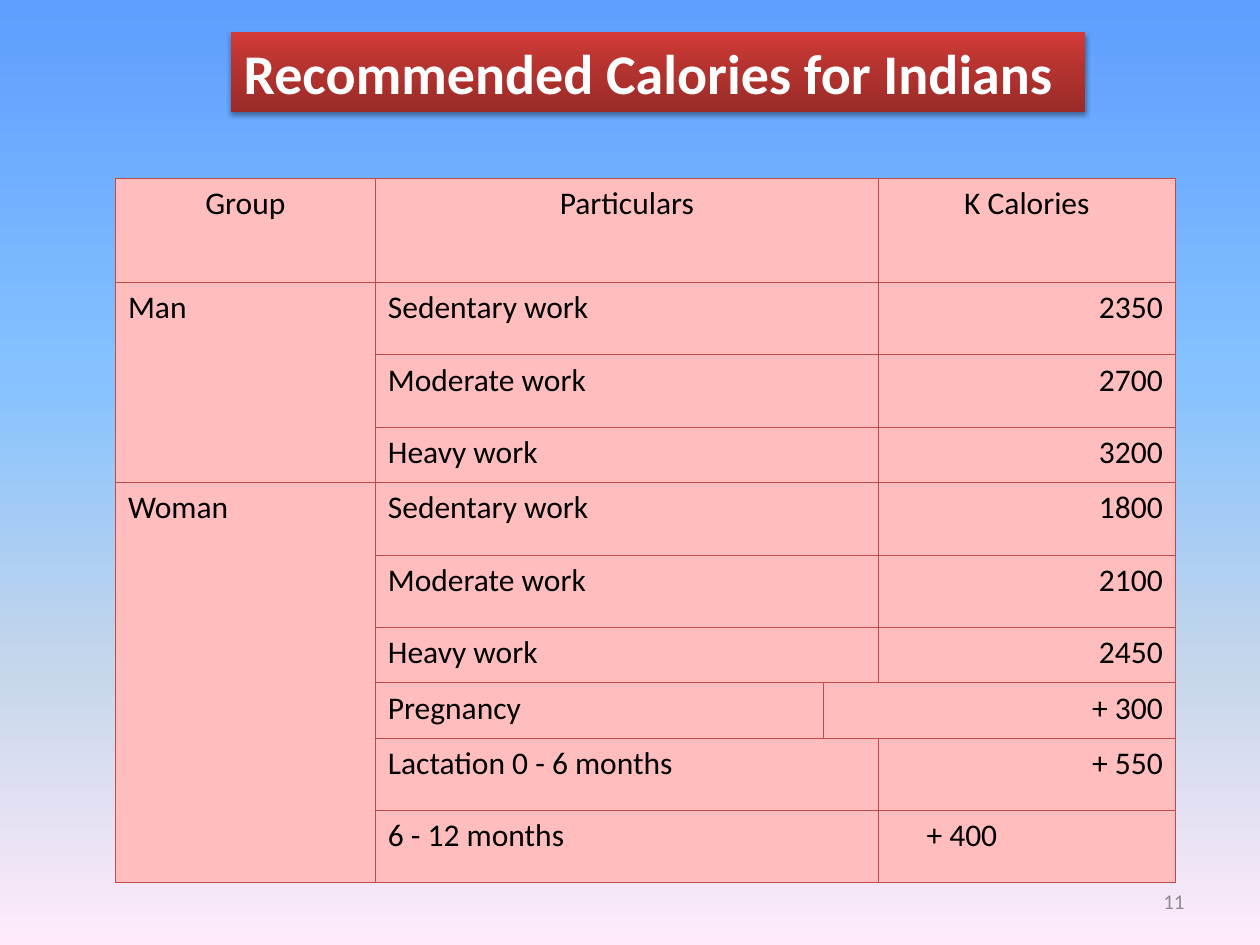
from lxml import etree
from pptx import Presentation
from pptx.dml.color import RGBColor
from pptx.enum.text import MSO_ANCHOR, MSO_AUTO_SIZE, PP_ALIGN
from pptx.oxml.ns import qn
from pptx.util import Pt

LEFT, CENTER, RIGHT = PP_ALIGN.LEFT, PP_ALIGN.CENTER, PP_ALIGN.RIGHT
MIDDLE, NO_FIT = MSO_ANCHOR.MIDDLE, MSO_AUTO_SIZE.NONE
BLACK = RGBColor(0x00, 0x00, 0x00)
WHITE = RGBColor(0xFF, 0xFF, 0xFF)
GRAY = RGBColor(0x8C, 0x8C, 0x8C)
PINK = RGBColor(0xFF, 0xBE, 0xBD)
RED = RGBColor(0xBF, 0x4C, 0x48)
SKY = [(0, RGBColor(0x5E, 0x9E, 0xFF)), (40, RGBColor(0x85, 0xC2, 0xFF)),
       (70, RGBColor(0xC4, 0xD6, 0xEB)), (100, RGBColor(0xFF, 0xEB, 0xFA))]
BRICK = [(0, RGBColor(0x9A, 0x2B, 0x28)), (55, RGBColor(0xB5, 0x33, 0x2F)),
         (100, RGBColor(0xD3, 0x3B, 0x37))]


def set_gradient(fill, element, stops, angle):
    fill.gradient()
    fill.gradient_angle = angle
    stop_list = element.find(".//" + qn("a:gsLst"))
    for old in list(stop_list):
        stop_list.remove(old)
    for pos, color in stops:
        gs = etree.SubElement(stop_list, qn("a:gs"), pos=str(pos * 1000))
        etree.SubElement(gs, qn("a:srgbClr"), val=str(color))


def add_text(tf, text, size, color, align, bold=False):
    p = tf.paragraphs[0]
    p.alignment = align
    r = p.add_run()
    r.text = text
    r.font.name = "Calibri"
    r.font.size = Pt(size)
    r.font.bold = bold
    r.font.color.rgb = color


prs = Presentation()
prs.slide_width, prs.slide_height = Pt(720), Pt(540)
s = prs.slides.add_slide(prs.slide_layouts[5])

# Background
set_gradient(s.background.fill, s.element, SKY, 270)

# Title banner
sp = s.shapes.title
sp.left, sp.top, sp.width, sp.height = Pt(132), Pt(18), Pt(488), Pt(46)
set_gradient(sp.fill, sp.element, BRICK, 90)
tf = sp.text_frame
tf.auto_size = NO_FIT
tf.word_wrap = False
tf.vertical_anchor = MIDDLE
add_text(tf, "Recommended Calories for Indians", 32, WHITE, LEFT, True)
sp.shadow.inherit = False
effects = sp.element.spPr.find(qn("a:effectLst"))
shadow = etree.SubElement(effects, qn("a:outerShdw"), blurRad=str(Pt(3.1)),
                          dist=str(Pt(2)), dir="5400000", rotWithShape="0")
color = etree.SubElement(shadow, qn("a:srgbClr"), val=str(BLACK))
etree.SubElement(color, qn("a:alpha"), val="38000")

# Calorie table: group, particulars, calories, row height
rows = [
    ("Group", "Particulars", "K Calories", 59.5),
    ("Man", "Sedentary work", "2350", 41.3),
    ("", "Moderate work", "2700", 41.3),
    ("", "Heavy work", "3200", 31.8),
    ("Woman", "Sedentary work", "1800", 41.3),
    ("", "Moderate work", "2100", 41.3),
    ("", "Heavy work", "2450", 31.8),
    ("", "Pregnancy", "+ 300", 31.8),
    ("", "Lactation 0 - 6 months", "+ 550", 41.3),
    ("", "6 - 12 months", "+ 400", 41.3),
]
col_widths = [148.5, 255.8, 31.7, 169.7]
table = s.shapes.add_table(len(rows), len(col_widths), Pt(66), Pt(102),
                           Pt(sum(col_widths)),
                           Pt(sum(row[3] for row in rows))).table
for col, width in zip(table.columns, col_widths):
    col.width = Pt(width)

# Cell borders and fill
for cell in table.iter_cells():
    tcPr = cell._tc.get_or_add_tcPr()
    for side in ("a:lnL", "a:lnR", "a:lnT", "a:lnB"):
        ln = etree.SubElement(tcPr, qn(side), w=str(Pt(0.5)))
        line_fill = etree.SubElement(ln, qn("a:solidFill"))
        etree.SubElement(line_fill, qn("a:srgbClr"), val=str(RED))
    cell.fill.solid()
    cell.fill.fore_color.rgb = PINK

# Merged groups, and the narrow third column joined to one neighbour
table.cell(1, 0).merge(table.cell(3, 0))
table.cell(4, 0).merge(table.cell(9, 0))
for i, (group, particulars, calories, height) in enumerate(rows):
    table.rows[i].height = Pt(height)
    value_col = 2 if particulars == "Pregnancy" else 3
    first = value_col if value_col == 2 else 1
    table.cell(i, first).merge(table.cell(i, first + 1))
    text_align = CENTER if i == 0 else LEFT
    value_align = CENTER if i == 0 else RIGHT
    if calories == "+ 400":
        value_align = LEFT
        table.cell(i, value_col).margin_left = Pt(27.5)
    if group:
        add_text(table.cell(i, 0).text_frame, group, 18, BLACK, text_align)
    add_text(table.cell(i, 1).text_frame, particulars, 18, BLACK, text_align)
    add_text(table.cell(i, value_col).text_frame, calories, 18, BLACK, value_align)

# Slide number
tf = s.shapes.add_textbox(Pt(516), Pt(500.5), Pt(168), Pt(28.75)).text_frame
tf.word_wrap = True
tf.vertical_anchor = MIDDLE
add_text(tf, "11", 12, GRAY, RIGHT)

prs.save("out.pptx")
